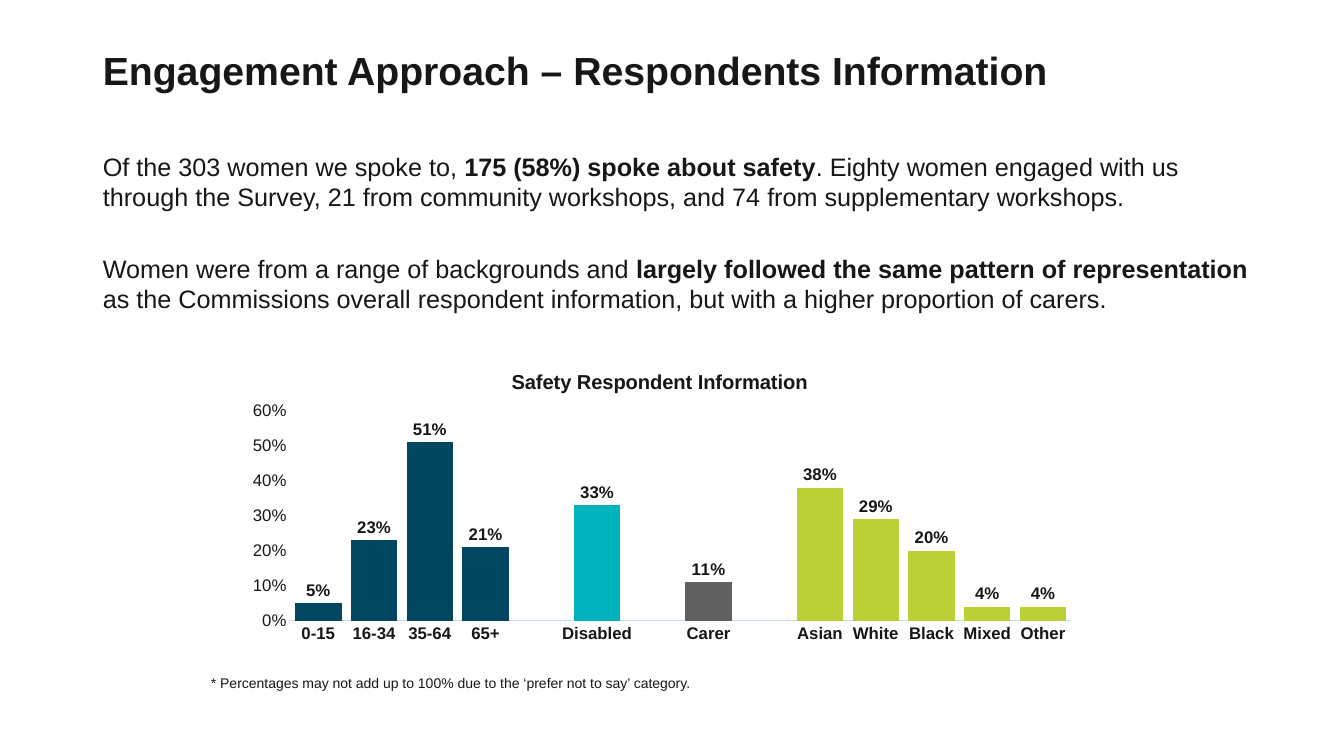
from lxml.etree import SubElement
from pptx import Presentation
from pptx.chart.data import CategoryChartData
from pptx.dml.color import RGBColor
from pptx.enum.chart import XL_CHART_TYPE, XL_LABEL_POSITION, XL_TICK_MARK
from pptx.enum.text import MSO_ANCHOR
from pptx.oxml.ns import qn
from pptx.util import Emu, Pt

PX = 914400 / 100.8
FONT = "Arial"
COLORS = {"ink": "181717", "line": "C2E0FF", "age": "01475F",
          "disabled": "00B2BC", "carer": "616161", "ethnic": "BBD035"}
GROUPS = [
    ("age", [("0-15", 0.05), ("16-34", 0.23), ("35-64", 0.51), ("65+", 0.21)]),
    ("disabled", [("Disabled", 0.33)]),
    ("carer", [("Carer", 0.11)]),
    ("ethnic", [("Asian", 0.38), ("White", 0.29), ("Black", 0.2),
                ("Mixed", 0.04), ("Other", 0.04)]),
]


def px(count):
    """Turn pixels into EMU."""
    return Emu(round(count * PX))


def color(name):
    """Look up a named colour."""
    return RGBColor.from_string(COLORS[name])


def style(font, size, bold=False):
    """Set the face, size, weight and ink of a font."""
    font.name, font.size, font.bold = FONT, Pt(size), bold
    font.color.rgb = color("ink")


def add_text(slide, box, size, runs, anchor=MSO_ANCHOR.TOP, space=None):
    """Add a wrapped text box made of (words, bold) runs."""
    frame = slide.shapes.add_textbox(*map(px, box)).text_frame
    frame.word_wrap, frame.vertical_anchor = True, anchor
    para = frame.paragraphs[0]
    para.line_spacing = space
    for words, bold in runs:
        run = para.add_run()
        run.text = words
        style(run.font, size, bold)


def pin(part, index, **spots):
    """Give a chart part a manual layout in shares of the chart."""
    for old in part.findall(qn("c:layout")):
        part.remove(old)
    layout = SubElement(part, qn("c:layout"))
    part.insert(index, layout)
    manual = SubElement(layout, qn("c:manualLayout"))
    if "w" in spots:
        SubElement(manual, qn("c:layoutTarget")).set("val", "inner")
    for key in ("x", "y"):
        SubElement(manual, qn(f"c:{key}Mode")).set("val", "edge")
    for key, share in spots.items():
        SubElement(manual, qn(f"c:{key}")).set("val", str(share))


def style_axes(chart):
    """Style both axes."""
    cats, vals = chart.category_axis, chart.value_axis
    for axis, bold in ((cats, True), (vals, False)):
        axis.major_tick_mark = axis.minor_tick_mark = XL_TICK_MARK.NONE
        axis.has_major_gridlines = False
        style(axis.tick_labels.font, 12, bold)
    cats.format.line.color.rgb = color("line")
    cats.format.line.width = Pt(0.75)
    vals.format.line.fill.background()
    vals.minimum_scale, vals.maximum_scale, vals.major_unit = 0, 0.6, 0.1
    vals.tick_labels.number_format = "0%"
    vals.tick_labels.number_format_is_linked = False


def style_bars(chart, bars):
    """Colour the bars and label their values."""
    plot = chart.plots[0]
    plot.gap_width, plot.overlap, plot.vary_by_categories = 20, -27, False
    for index, (hue, name, value) in enumerate(bars):
        if hue:
            fill = plot.series[0].points[index].format.fill
            fill.solid()
            fill.fore_color.rgb = color(hue)
    labels = plot.series[0].data_labels
    labels.show_value = True
    labels.position = XL_LABEL_POSITION.OUTSIDE_END
    labels.number_format, labels.number_format_is_linked = "0%", False
    style(labels.font, 12, True)


def add_bars(slide, box, title):
    """Add the column chart with a gap between groups."""
    bars = []
    for hue, items in GROUPS:
        if bars:
            bars.append((None, "", None))
        bars += [(hue, name, value) for name, value in items]
    data = CategoryChartData(number_format="0%")
    data.categories = [name for hue, name, value in bars]
    data.add_series("Series 1", [value for hue, name, value in bars])
    chart = slide.shapes.add_chart(
        XL_CHART_TYPE.COLUMN_CLUSTERED, *map(px, box), data).chart
    style(chart.font, 12)
    chart.has_legend = False
    run = chart.chart_title.text_frame.paragraphs[0].add_run()
    run.text = title
    style(run.font, 14.4, True)
    style_axes(chart)
    style_bars(chart, bars)
    pin(chart.chart_title._element, 1, x=0.32, y=0.05)
    area = chart.plots[0]._element.getparent()
    pin(area, 0, x=0.065, y=0.2, w=0.915, h=0.7)


def main():
    """Build the slide and save it."""
    deck = Presentation()
    deck.slide_width, deck.slide_height = px(1344), px(756)
    slide = deck.slides.add_slide(deck.slide_layouts[6])
    add_text(slide, (93, 0, 1078, 146), 28,
             [("Engagement Approach – Respondents Information", True)],
             MSO_ANCHOR.MIDDLE, 0.9)
    add_text(slide, (93, 146, 1148, 72), 18, [
        ("Of the 303 women we spoke to, ", False),
        ("175 (58%) spoke about safety", True),
        (". Eighty women engaged with us through the Survey, 21 from community "
         "workshops, and 74 from supplementary workshops.", False)])
    add_text(slide, (201, 670, 500, 27), 10, [
        ("* Percentages may not add up to 100% due to the "
         "‘prefer not to say’ category.", False)])
    add_text(slide, (93, 248, 1198, 102), 18, [
        ("Women were from a range of backgrounds and ", False),
        ("largely followed the same pattern of representation ", True),
        ("as the Commissions overall respondent information, but with a higher "
         "proportion of carers.", False)])
    add_bars(slide, (235, 351, 853, 300), "Safety Respondent Information")
    deck.save("out.pptx")


if __name__ == "__main__":
    main()
